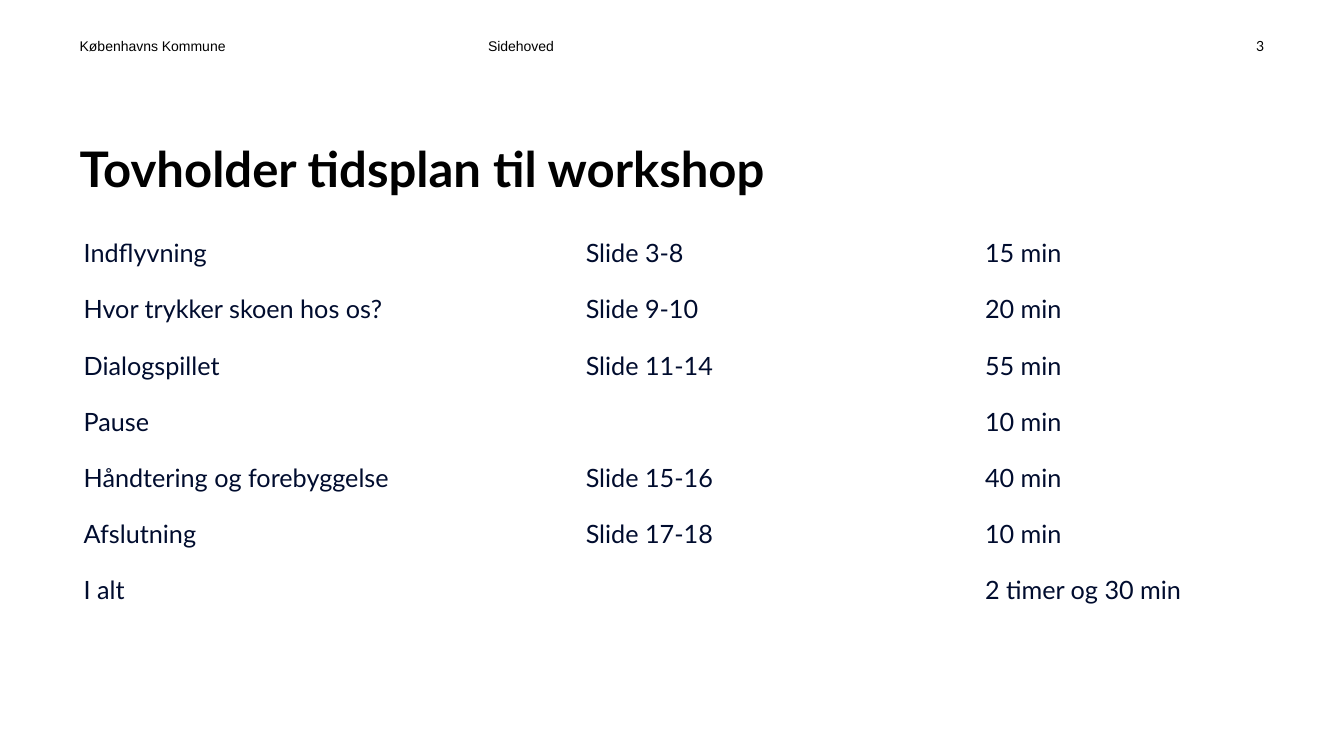
from dataclasses import dataclass

from pptx import Presentation
from pptx.dml.color import RGBColor
from pptx.enum.text import MSO_ANCHOR, MSO_AUTO_SIZE, PP_ALIGN
from pptx.slide import Slide
from pptx.text.text import TextFrame
from pptx.util import Inches, Pt


@dataclass(frozen=True)
class Theme:
    black: RGBColor = RGBColor(0x00, 0x00, 0x00)
    navy: RGBColor = RGBColor(0x00, 0x0C, 0x2E)
    heading_font: str = "Lato"
    header_font: str = "Arial"
    title_size: int = 35
    table_size: int = 18
    header_size: int = 10


@dataclass(frozen=True)
class HeaderItem:
    text: str
    left: float
    width: float
    font: str
    align: PP_ALIGN = PP_ALIGN.LEFT


@dataclass(frozen=True)
class Activity:
    name: str
    slides: str
    duration: str


THEME = Theme()

HEADER = [
    HeaderItem("Københavns Kommune", 0.79, 3.85, THEME.header_font),
    HeaderItem("Sidehoved", 4.84, 4.48, THEME.header_font),
    HeaderItem("3", 12.11, 0.43, THEME.heading_font, PP_ALIGN.RIGHT),
]

SCHEDULE = [
    Activity("Indflyvning", "Slide 3-8", "15 min"),
    Activity("Hvor trykker skoen hos os?", "Slide 9-10", "20 min"),
    Activity("Dialogspillet", "Slide 11-14", "55 min"),
    Activity("Pause", "", "10 min"),
    Activity("Håndtering og forebyggelse", "Slide 15-16", "40 min"),
    Activity("Afslutning", "Slide 17-18", "10 min"),
    Activity("I alt", "", "2 timer og 30 min"),
]
COLUMN_WIDTHS = [4.98, 3.96, 2.81]
TABLE_HEIGHT = 3.9


def set_text(tf: TextFrame, text: str, font: str, size: int, color: RGBColor,
             align: PP_ALIGN = PP_ALIGN.LEFT, bold: bool = False) -> None:
    tf.text = text
    p = tf.paragraphs[0]
    p.alignment = align
    p.font.name = font
    p.font.size = Pt(size)
    p.font.bold = bold
    p.font.color.rgb = color


def frame_at_bottom(tf: TextFrame) -> None:
    tf.margin_left = tf.margin_right = tf.margin_top = tf.margin_bottom = 0
    tf.vertical_anchor = MSO_ANCHOR.BOTTOM
    tf.word_wrap = True
    tf.auto_size = MSO_AUTO_SIZE.NONE


def add_header_item(s: Slide, item: HeaderItem) -> None:
    sp = s.shapes.add_textbox(Inches(item.left), Inches(0.34),
                              Inches(item.width), Inches(0.2))
    frame_at_bottom(sp.text_frame)
    set_text(sp.text_frame, item.text, item.font, THEME.header_size,
             THEME.black, item.align)


def add_title(s: Slide, text: str) -> None:
    sp = s.shapes.title
    sp.left, sp.top = Inches(0.79), Inches(0.98)
    sp.width, sp.height = Inches(11.76), Inches(0.98)
    frame_at_bottom(sp.text_frame)
    set_text(sp.text_frame, text, THEME.heading_font, THEME.title_size,
             THEME.black, bold=True)
    sp.text_frame.paragraphs[0].line_spacing = 0.83


def add_schedule(s: Slide, schedule: list[Activity]) -> None:
    table = s.shapes.add_table(
        len(schedule), len(COLUMN_WIDTHS), Inches(0.73), Inches(2.31),
        Inches(sum(COLUMN_WIDTHS)), Inches(TABLE_HEIGHT)).table
    table.first_row = table.horz_banding = False
    for column, width in zip(table.columns, COLUMN_WIDTHS):
        column.width = Inches(width)
    for row, activity in zip(table.rows, schedule):
        values = (activity.name, activity.slides, activity.duration)
        for cell, value in zip(row.cells, values):
            cell.fill.background()
            set_text(cell.text_frame, value, THEME.heading_font,
                     THEME.table_size, THEME.navy)


def main() -> None:
    prs = Presentation()
    prs.slide_width, prs.slide_height = Inches(13.33), Inches(7.5)
    s = prs.slides.add_slide(prs.slide_layouts[5])

    # Title and timetable
    add_title(s, "Tovholder tidsplan til workshop")
    add_schedule(s, SCHEDULE)

    # Page header
    for item in HEADER:
        add_header_item(s, item)

    prs.save("out.pptx")


if __name__ == "__main__":
    main()
